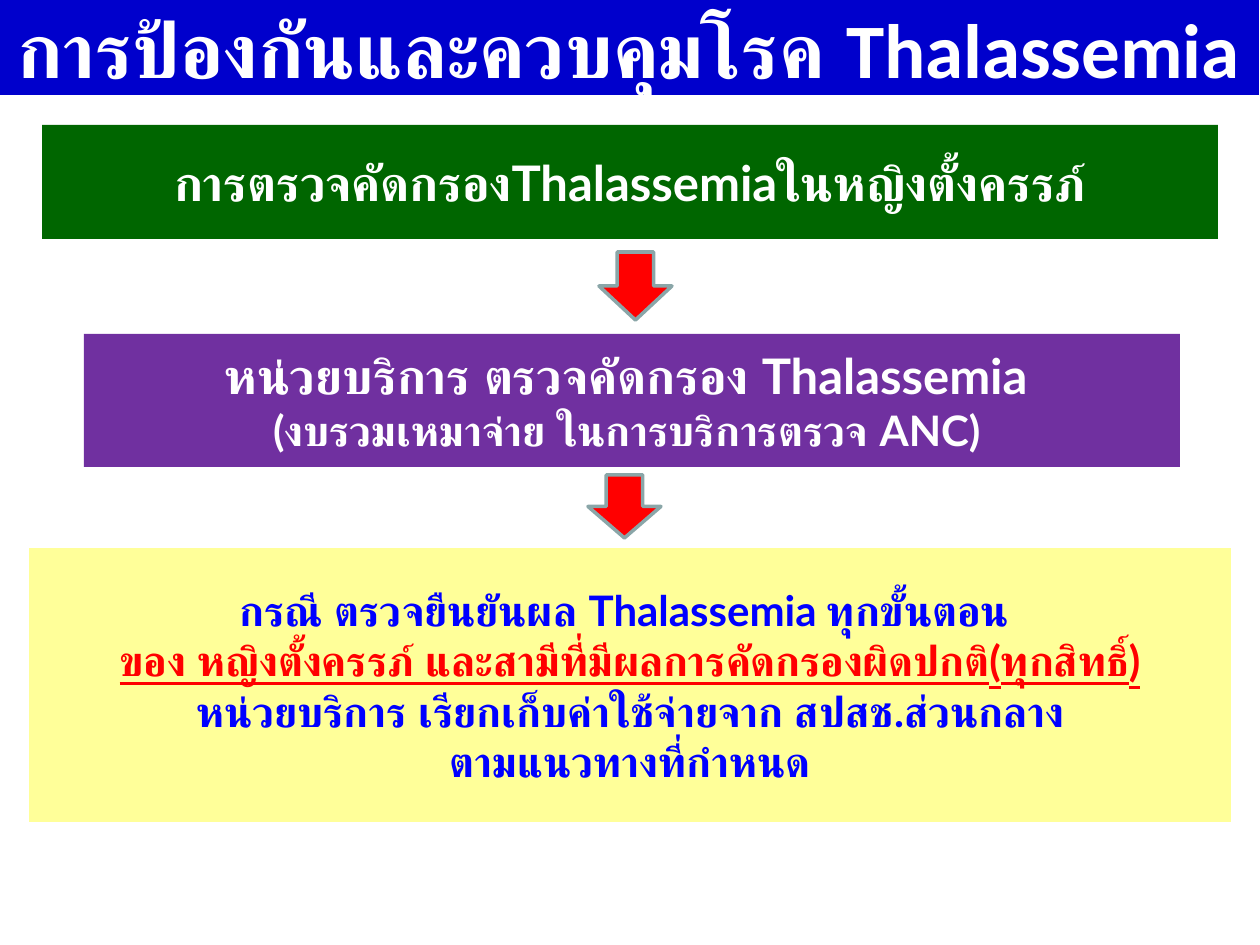
"""Build the slide on thalassemia prevention and control as a three-step flow."""
import pptx
import pptx.util
import pptx.dml.color
import pptx.enum.shapes
import pptx.enum.text

THEME = {
    "white": "FFFFFF", "blue": "0000FF", "red": "FF0000", "arrow_line": "8AA6A8",
    "title_bg": "0000CC", "green": "006600", "purple": "7030A0", "yellow": "FFFF99",
    "title": 44, "heading": 28, "body": 24,
    "title_font": "Calibri", "body_font": "Lato",
}

ARROWS = [(599, 252, 73, 68), (588, 475, 73, 63)]

BOXES = [
    ((84, 334, 1096, 133), "purple", "body_font", [
        ("หน่วยบริการ ตรวจคัดกรอง Thalassemia ", "heading", "white", False),
        ("(งบรวมเหมาจ่าย ในการบริการตรวจ ANC) ", "body", "white", False),
    ]),
    ((29, 548, 1202, 274), "yellow", "body_font", [
        ("กรณี ตรวจยืนยันผล Thalassemia ทุกขั้นตอน ", "body", "blue", False),
        ("ของ หญิงตั้งครรภ์ และสามีที่มีผลการคัดกรองผิดปกติ(ทุกสิทธิ์)", "body", "red", True),
        ("หน่วยบริการ เรียกเก็บค่าใช้จ่ายจาก สปสช.ส่วนกลาง", "body", "blue", False),
        ("ตามแนวทางที่กำหนด", "body", "blue", False),
    ]),
    ((42, 125, 1176, 114), "green", "body_font", [
        ("การตรวจคัดกรองThalassemiaในหญิงตั้งครรภ์", "heading", "white", False),
    ]),
    ((-1, 0, 1260, 95), "title_bg", "title_font", [
        ("การป้องกันและควบคุมโรค Thalassemia", "title", "white", False),
    ]),
]


def px(n):
    return pptx.util.Emu(round(n * 914400 / 126))


def color(name):
    return pptx.dml.color.RGBColor.from_string(THEME[name])


def add_shape(slide, kind, place, fill):
    sp = slide.shapes.add_shape(kind, *map(px, place))
    sp.shadow.inherit = False
    sp.fill.solid()
    sp.fill.fore_color.rgb = color(fill)
    return sp


def add_arrow(slide, place):
    sp = add_shape(slide, pptx.enum.shapes.MSO_SHAPE.DOWN_ARROW, place, "red")
    sp.line.color.rgb = color("arrow_line")
    sp.line.width = pptx.util.Pt(2)


def add_box(slide, place, fill, font, lines):
    sp = add_shape(slide, pptx.enum.shapes.MSO_SHAPE.RECTANGLE, place, fill)
    sp.line.fill.background()
    tf = sp.text_frame
    tf.word_wrap = True
    tf.vertical_anchor = pptx.enum.text.MSO_ANCHOR.MIDDLE
    for i, (text, size, ink, underline) in enumerate(lines):
        p = tf.add_paragraph() if i else tf.paragraphs[0]
        p.text = text
        p.alignment = pptx.enum.text.PP_ALIGN.CENTER
        p.font.name = THEME[font]
        p.font.size = pptx.util.Pt(THEME[size])
        p.font.bold = True
        p.font.underline = underline
        p.font.color.rgb = color(ink)


def main():
    prs = pptx.Presentation()
    prs.slide_width, prs.slide_height = px(1260), px(945)
    slide = prs.slides.add_slide(prs.slide_layouts[6])
    for place in ARROWS:
        add_arrow(slide, place)
    for box in BOXES:
        add_box(slide, *box)
    prs.save("out.pptx")


if __name__ == "__main__":
    main()
